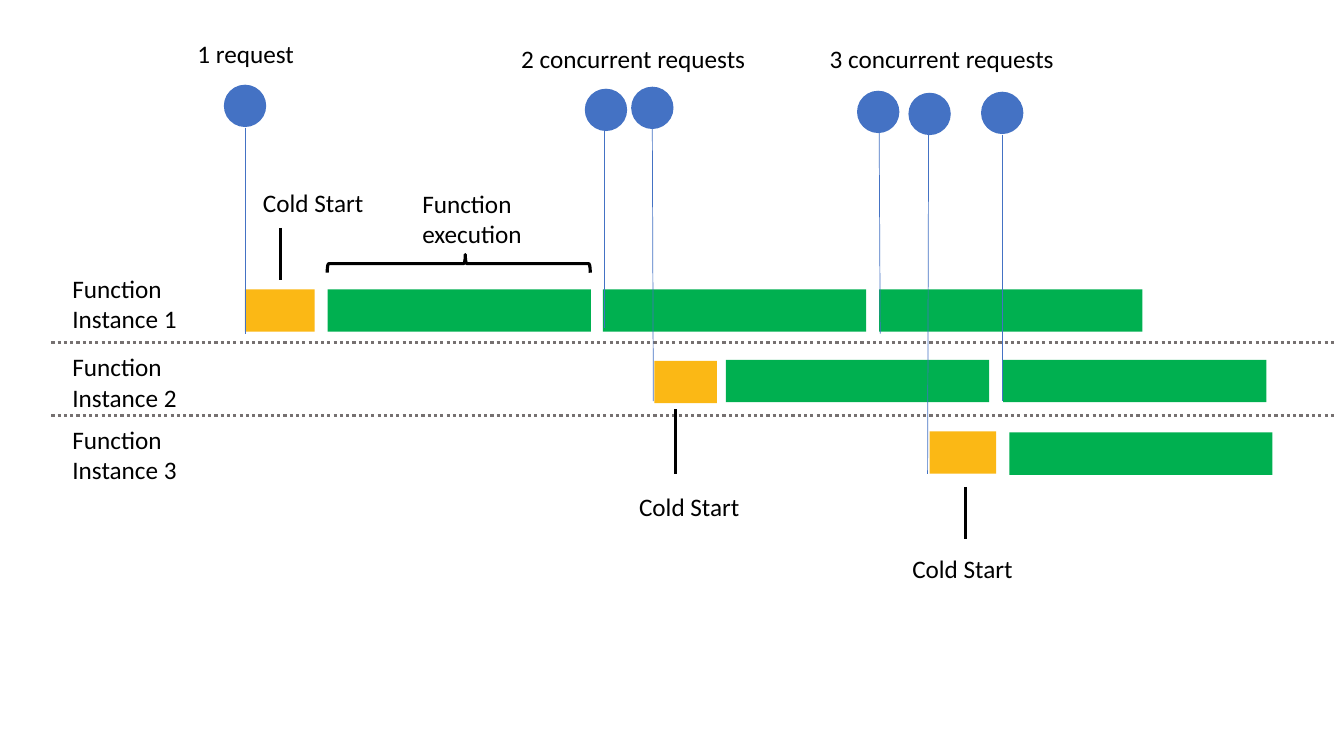
from dataclasses import dataclass

from lxml import etree
from pptx import Presentation
from pptx.dml.color import RGBColor
from pptx.enum import dml, shapes, text
from pptx.oxml import ns
from pptx.util import Inches, Pt


@dataclass(frozen=True)
class Theme:
    font: str = "Calibri"
    size: float = 18
    ink: str = "000000"
    execution: str = "00B050"
    cold_start: str = "FBB815"
    request: str = "4472C4"
    divider: str = "767171"
    thick: float = 2.25
    thin: float = 0.5


@dataclass(frozen=True)
class Bar:
    left: float
    top: float
    width: float
    color: str


@dataclass(frozen=True)
class Label:
    left: float
    top: float
    width: float
    lines: tuple[str, ...]
    height: float = 0.4


@dataclass(frozen=True)
class Line:
    x1: float
    y1: float
    x2: float
    y2: float


@dataclass(frozen=True)
class Request:
    left: float
    top: float
    stem: Line


THEME = Theme()
BAR_HEIGHT = 0.42
DOT = 0.42
RUN = 2.61
ROW_TOPS = (2.87, 3.57, 4.29)

EXECUTIONS = [
    Bar(left, ROW_TOPS[row], RUN, THEME.execution)
    for left, row in ((3.25, 0), (5.98, 0), (7.2, 1), (8.72, 0), (9.95, 1), (10.01, 2))
]
COLD_STARTS = [
    Bar(2.43, 2.87, 0.69, THEME.cold_start),
    Bar(6.49, 3.58, 0.62, THEME.cold_start),
    Bar(9.22, 4.28, 0.66, THEME.cold_start),
]
DIVIDERS = [Line(0.51, y, 13.23, y) for y in (3.4, 4.12)]
POINTERS = [Line(x, y1, x, y2) for x, y1, y2 in
            ((2.78, 2.26, 2.78), (6.7, 4.06, 4.7), (9.58, 4.83, 5.35))]
LABELS = [
    Label(4.09, 1.82, 1.64, ("Function execution",), 0.71),
    *(Label(left, top, 1.47, ("Cold Start",))
      for left, top in ((2.51, 1.81), (6.24, 4.83), (8.95, 5.44))),
    Label(0.62, 2.66, 1.44, ("Function Instance 1",), 0.71),
    Label(0.62, 3.44, 1.44, ("Function Instance 2",), 0.71),
    Label(0.62, 4.16, 1.44, ("Function", "Instance 3"), 0.71),
    Label(1.86, 0.33, 1.31, ("1 request",)),
    Label(5.07, 0.38, 2.61, ("2 concurrent requests",)),
    Label(8.13, 0.38, 2.61, ("3 concurrent requests",)),
]
REQUESTS = [
    Request(2.22, 0.84, Line(2.43, 1.27, 2.43, 3.31)),
    Request(5.8, 0.88, Line(5.99, 1.2, 5.99, 3.25)),
    Request(6.26, 0.86, Line(6.47, 1.28, 6.48, 3.98)),
    Request(8.5, 0.9, Line(8.72, 1.3, 8.73, 3.31)),
    Request(9.01, 0.92, Line(9.21, 1.33, 9.2, 4.7)),
    Request(9.73, 0.91, Line(9.94, 1.34, 9.94, 3.98)),
]


def add_filled(slide, kind: shapes.MSO_SHAPE, left: float, top: float,
               width: float, height: float, color: str) -> None:
    sp = slide.shapes.add_shape(kind, Inches(left), Inches(top), Inches(width), Inches(height))
    sp.shadow.inherit = False
    sp.fill.solid()
    sp.fill.fore_color.rgb = RGBColor.from_string(color)
    sp.line.fill.background()


def add_bar(slide, bar: Bar) -> None:
    add_filled(slide, shapes.MSO_SHAPE.RECTANGLE, bar.left, bar.top,
               bar.width, BAR_HEIGHT, bar.color)


def add_line(slide, line: Line, color: str, weight: float, dotted: bool = False) -> None:
    cxn = slide.shapes.add_connector(shapes.MSO_CONNECTOR.STRAIGHT, Inches(line.x1),
                                     Inches(line.y1), Inches(line.x2), Inches(line.y2))
    cxn.line.color.rgb = RGBColor.from_string(color)
    cxn.line.width = Pt(weight)
    if dotted:
        cxn.line.dash_style = dml.MSO_LINE.ROUND_DOT
    etree.SubElement(cxn.element.spPr, ns.qn("a:effectLst"))


def add_label(slide, label: Label) -> None:
    box = slide.shapes.add_textbox(Inches(label.left), Inches(label.top),
                                   Inches(label.width), Inches(label.height))
    tf = box.text_frame
    tf.word_wrap = True
    tf.auto_size = text.MSO_AUTO_SIZE.SHAPE_TO_FIT_TEXT
    tf.text = "\n".join(label.lines)
    for p in tf.paragraphs:
        p.font.name = THEME.font
        p.font.size = Pt(THEME.size)
        p.font.color.rgb = RGBColor.from_string(THEME.ink)


def add_execution_brace(slide) -> None:
    """Turn a right brace upwards so that it spans the first execution."""
    sp = slide.shapes.add_shape(shapes.MSO_SHAPE.RIGHT_BRACE, Inches(4.46), Inches(1.31),
                                Inches(0.18), Inches(RUN))
    sp.rotation = 270
    sp.adjustments[0] = 0.08
    sp.adjustments[1] = 0.525
    sp.shadow.inherit = False
    sp.fill.background()
    sp.line.color.rgb = RGBColor.from_string(THEME.ink)
    sp.line.width = Pt(THEME.thick)


def main() -> None:
    prs = Presentation()
    prs.slide_width, prs.slide_height = Inches(13.33), Inches(7.5)
    slide = prs.slides.add_slide(prs.slide_layouts.get_by_name("Blank"))

    for bar in EXECUTIONS:
        add_bar(slide, bar)
    add_execution_brace(slide)
    for divider in DIVIDERS:
        add_line(slide, divider, THEME.divider, THEME.thick, dotted=True)
    for bar in COLD_STARTS:
        add_bar(slide, bar)
    for pointer in POINTERS:
        add_line(slide, pointer, THEME.ink, THEME.thick)
    for label in LABELS:
        add_label(slide, label)
    for request in REQUESTS:
        add_filled(slide, shapes.MSO_SHAPE.OVAL, request.left, request.top,
                   DOT, DOT, THEME.request)
    for request in REQUESTS:
        add_line(slide, request.stem, THEME.request, THEME.thin)

    prs.save("out.pptx")


if __name__ == "__main__":
    main()
